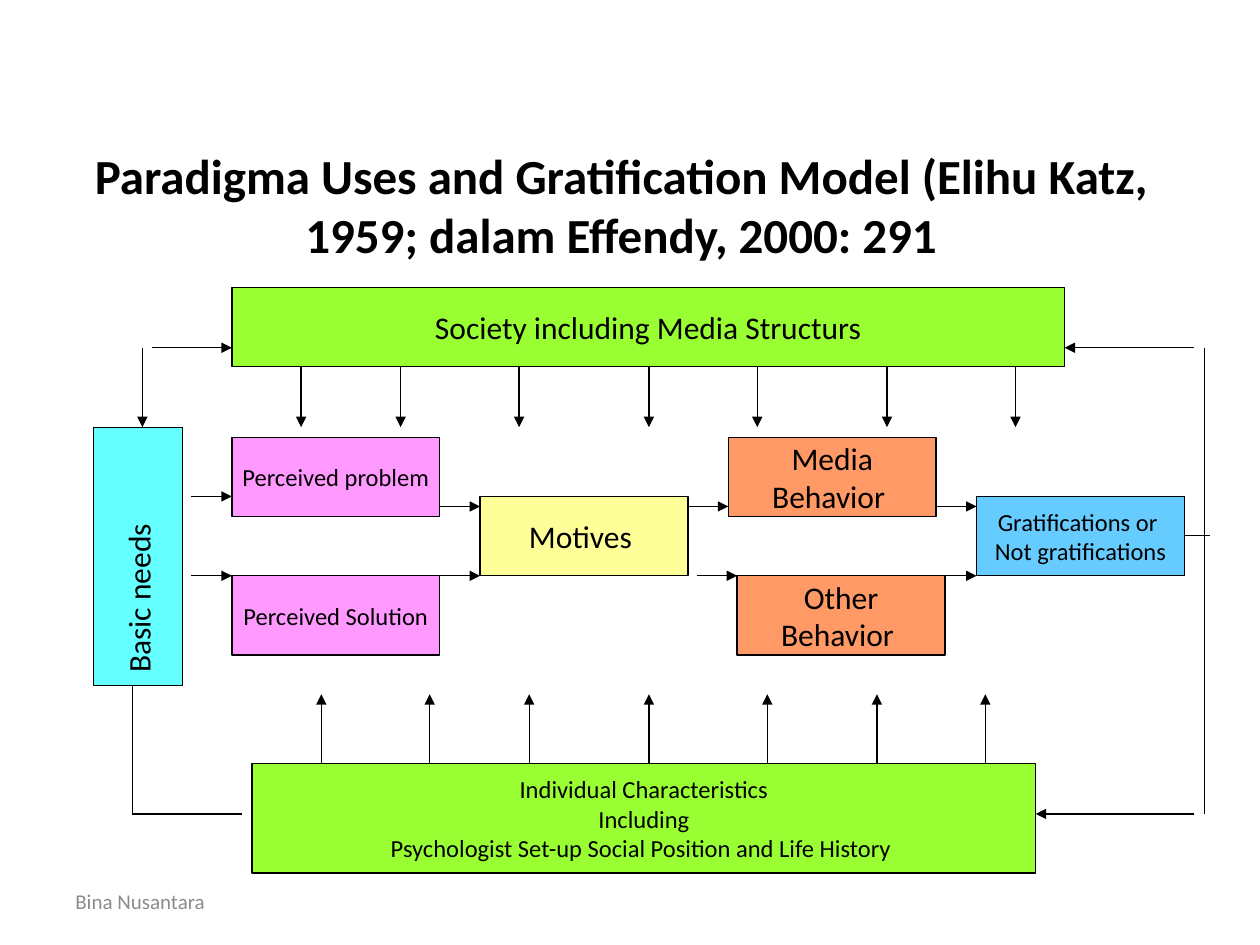
"""Build the Uses and Gratification paradigm flow diagram slide."""
from lxml.etree import SubElement
from pptx import Presentation
from pptx.dml.color import RGBColor
from pptx.enum.shapes import MSO_CONNECTOR, MSO_SHAPE
from pptx.enum.text import MSO_ANCHOR, PP_ALIGN
from pptx.oxml.ns import qn
from pptx.util import Inches, Pt

BLACK = RGBColor(0, 0, 0)
GRAY = RGBColor(0x8C, 0x8C, 0x8C)
GREEN = RGBColor(0x99, 0xFF, 0x33)
CYAN = RGBColor(0x66, 0xFF, 0xFF)
PINK = RGBColor(0xFF, 0x99, 0xFF)
YELLOW = RGBColor(0xFF, 0xFF, 0x99)
ORANGE = RGBColor(0xFF, 0x99, 0x66)
BLUE = RGBColor(0x66, 0xCC, 0xFF)

TITLE = "Paradigma Uses and Gratification Model (Elihu Katz, 1959; dalam Effendy, 2000: 291"
FOOTER = "Bina Nusantara"

STEP, BOX_WIDTH, BOX_HEIGHT = 1.97, 1.65, 0.63
COLUMNS = [1.84 + STEP * index for index in range(4)]
UPPER, MIDDLE, LOWER = 3.47, 3.94, 4.57
OTHER_LEFT = 5.85
SOCIETY = (COLUMNS[0], 2.28, 6.61, BOX_HEIGHT)
NEEDS = (0.74, 3.39, 0.71, 2.05)
INDIVIDUAL = (2, 6.06, 6.22, 0.87)

BOXES = [
    (SOCIETY, GREEN, 18, "Society including Media Structurs"),
    ((COLUMNS[0], UPPER), PINK, 14, "Perceived problem"),
    ((COLUMNS[0], LOWER), PINK, 14, "Perceived Solution"),
    ((COLUMNS[1], MIDDLE), YELLOW, 18, "Motives "),
    ((COLUMNS[2], UPPER), ORANGE, 18, "Media\nBehavior "),
    ((COLUMNS[3], MIDDLE), BLUE, 14, "Gratifications or \nNot gratifications"),
    ((OTHER_LEFT, LOWER), ORANGE, 18, "Other\nBehavior "),
    (INDIVIDUAL, GREEN, 14,
     "Individual Characteristics\nIncluding\nPsychologist Set-up Social Position and Life History "),
]

DOWN_ARROWS = [2.39, 3.18, 4.12, 5.15, 6.01, 7.04, 8.06]
UP_ARROWS = [2.55, 3.41, 4.2, 5.15, 6.09, 6.96, 7.82]
GAP = STEP - BOX_WIDTH
FLOW_ROW = 4.02
FLOW_ENDS = [
    (COLUMNS[0], MIDDLE), (COLUMNS[0], LOWER),
    (COLUMNS[1], FLOW_ROW), (COLUMNS[1], LOWER),
    (COLUMNS[2], FLOW_ROW), (OTHER_LEFT, LOWER),
    (COLUMNS[3], FLOW_ROW), (COLUMNS[3], LOWER),
]

TOP_LOOP, BOTTOM_LOOP = 2.76, 6.46
RIGHT_LOOP, RIGHT_START = 9.56, 9.48
NEEDS_IN, NEEDS_OUT = 1.13, 1.05
LOOP_ARROWS = [
    (RIGHT_START, BOTTOM_LOOP, INDIVIDUAL[0] + INDIVIDUAL[2], BOTTOM_LOOP),
    (RIGHT_START, TOP_LOOP, SOCIETY[0] + SOCIETY[2], TOP_LOOP),
    (NEEDS_IN, TOP_LOOP, NEEDS_IN, NEEDS[1]),
    (1.21, TOP_LOOP, SOCIETY[0], TOP_LOOP),
]
PLAIN_LINES = [
    (RIGHT_LOOP, TOP_LOOP, RIGHT_LOOP, BOTTOM_LOOP),
    (NEEDS_OUT, NEEDS[1] + NEEDS[3], NEEDS_OUT, BOTTOM_LOOP),
    (NEEDS_OUT, BOTTOM_LOOP, 1.92, BOTTOM_LOOP),
    (COLUMNS[3] + BOX_WIDTH, 4.25, 9.6, 4.25),
]


def write_text(shape, text, size, color=BLACK, bold=False, align=PP_ALIGN.CENTER, wrap=True):
    frame = shape.text_frame
    frame.word_wrap = wrap
    frame.vertical_anchor = MSO_ANCHOR.MIDDLE
    frame.text = text
    for para in frame.paragraphs:
        para.alignment = align
        for span in para.runs:
            span.font.name = "Calibri"
            span.font.size = Pt(size)
            span.font.bold = bold
            span.font.color.rgb = color


def add_label(page, place, text, size, **style):
    box = page.shapes.add_textbox(*map(Inches, place))
    write_text(box, text, size, **style)


def add_box(page, place, fill, size, text, **style):
    left, top, width, height = (*place, BOX_WIDTH, BOX_HEIGHT)[:4]
    box = page.shapes.add_shape(MSO_SHAPE.RECTANGLE, *map(Inches, (left, top, width, height)))
    box.shadow.inherit = False
    box.fill.solid()
    box.fill.fore_color.rgb = fill
    box.line.color.rgb = BLACK
    box.line.width = Pt(0.75)
    write_text(box, text, size, **style)
    return box


def add_line(page, ends, arrow=False):
    line = page.shapes.add_connector(MSO_CONNECTOR.STRAIGHT, *map(Inches, ends))
    line.line.color.rgb = BLACK
    line.line.width = Pt(0.75)
    if arrow:
        SubElement(line.line._get_or_add_ln(), qn("a:tailEnd"), type="triangle")
    SubElement(line._element.spPr, qn("a:effectLst"))


def main():
    deck = Presentation()
    deck.slide_width, deck.slide_height = Inches(10), Inches(7.5)
    page = deck.slides.add_slide(deck.slide_layouts[6])

    add_label(page, (0.5, 6.95, 2.33, 0.4), FOOTER, 12, color=GRAY, align=PP_ALIGN.LEFT)
    add_label(page, (0.43, 1.07, 9, 1.1), TITLE, 28, bold=True)

    for place, fill, size, text in BOXES:
        add_box(page, place, fill, size, text, wrap=False)
    needs = add_box(page, NEEDS, CYAN, 18, "Basic needs", align=PP_ALIGN.LEFT)
    needs.text_frame.margin_bottom = Inches(0.1)
    needs.text_frame._txBody.bodyPr.set("vert", "vert270")

    society_bottom = SOCIETY[1] + SOCIETY[3]
    arrows = LOOP_ARROWS + [(x, society_bottom, x, NEEDS[1]) for x in DOWN_ARROWS]
    arrows += [(x - GAP, y, x, y) for x, y in FLOW_ENDS]
    arrows += [(x, INDIVIDUAL[1], x, 5.51) for x in UP_ARROWS]
    for ends in arrows:
        add_line(page, ends, arrow=True)
    for ends in PLAIN_LINES:
        add_line(page, ends)

    deck.save("out.pptx")


if __name__ == "__main__":
    main()
